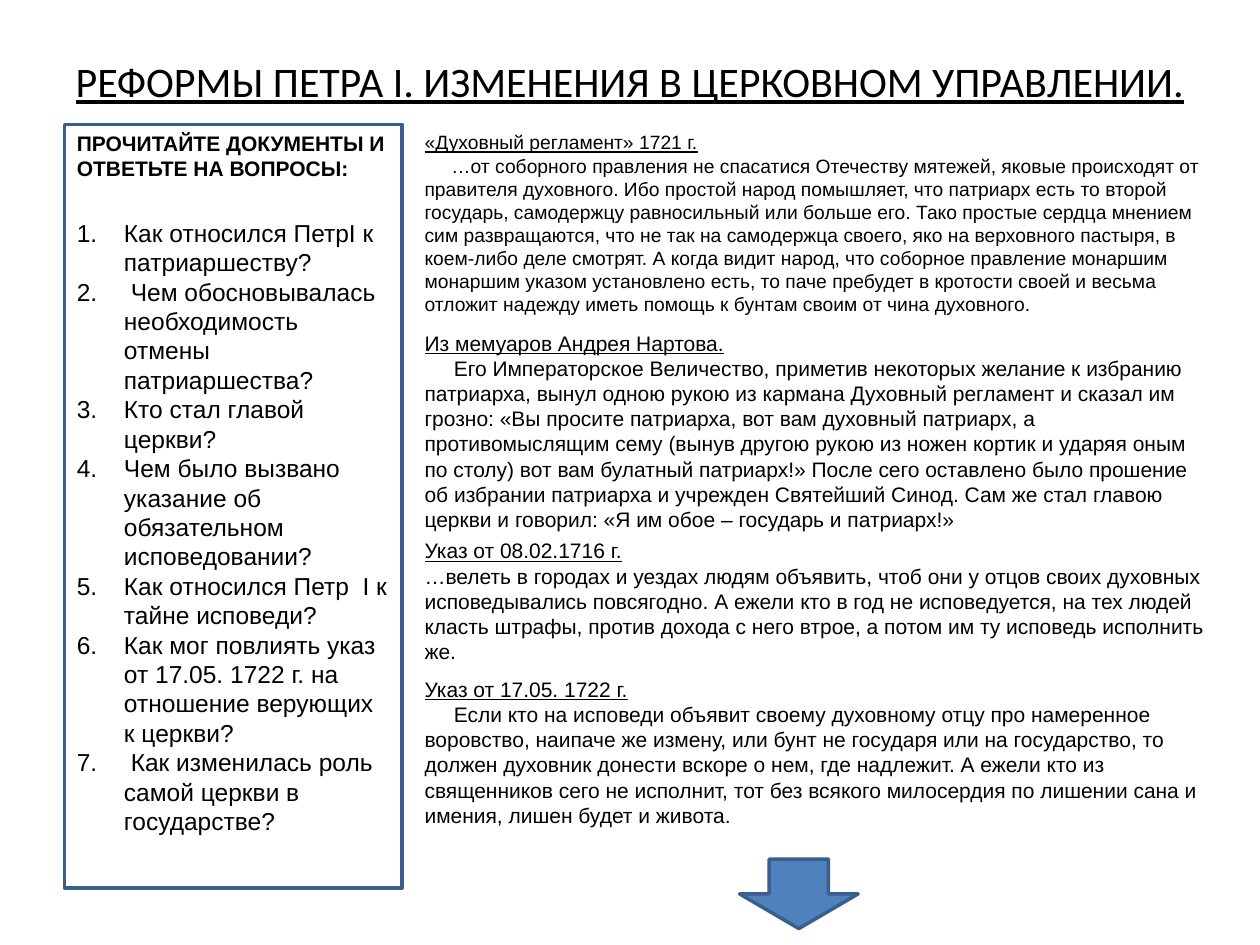
from pptx import Presentation
from pptx.dml.color import RGBColor
from pptx.enum.shapes import MSO_SHAPE
from pptx.enum.text import MSO_ANCHOR, PP_ALIGN
from pptx.util import Cm, Pt

RECTANGLE, DOWN_ARROW = MSO_SHAPE.RECTANGLE, MSO_SHAPE.DOWN_ARROW
TOP, MIDDLE = MSO_ANCHOR.TOP, MSO_ANCHOR.MIDDLE
LEFT, CENTER = PP_ALIGN.LEFT, PP_ALIGN.CENTER
BLACK = RGBColor(0x00, 0x00, 0x00)
BLUE = RGBColor(0x4F, 0x81, 0xBD)
DARK_BLUE = RGBColor(0x3A, 0x5F, 0x8C)

QUESTIONS = [
    "Как относился ПетрI к патриаршеству?",
    " Чем обосновывалась необходимость отмены патриаршества?",
    "Кто стал главой церкви?",
    "Чем было вызвано указание об обязательном исповедовании?",
    "Как относился Петр  I к тайне исповеди?",
    "Как мог повлиять указ от 17.05. 1722 г. на отношение верующих к церкви?",
    " Как изменилась роль самой церкви в государстве?",
]

# top (cm), height (cm), font size (pt), first-line indent (cm), heading, text
DOCUMENTS = [
    (2.51, 4.78, 11, 0.54, "«Духовный регламент» 1721 г.",
     "…от соборного правления не спасатися Отечеству мятежей, яковые происходят от "
     "правителя духовного. Ибо простой народ помышляет, что патриарх есть то второй "
     "государь, самодержцу равносильный или больше его. Тако простые сердца мнением "
     "сим развращаются, что не так на самодержца своего, яко на верховного пастыря, в "
     "коем-либо деле смотрят. А когда видит народ, что соборное правление монаршим "
     "монаршим указом установлено есть, то паче пребудет в кротости своей и весьма "
     "отложит надежду иметь помощь к бунтам своим от чина духовного."),
    (6.53, 4.37, 12, 0.59, "Из мемуаров Андрея Нартова.",
     "Его Императорское Величество, приметив некоторых желание к избранию "
     "патриарха, вынул одною рукою из кармана Духовный регламент и сказал им "
     "грозно: «Вы просите патриарха, вот вам духовный патриарх, а "
     "противомыслящим сему (вынув другою рукою из ножен кортик и ударяя оным "
     "по столу) вот вам булатный патриарх!» После сего оставлено было прошение "
     "об избрании патриарха и учрежден Святейший Синод. Сам же стал главою "
     "церкви и говорил: «Я им обое – государь и патриарх!»"),
    (10.72, 2.82, 12, 0, "Указ от 08.02.1716 г.",
     "…велеть в городах и уездах людям объявить, чтоб они у отцов своих духовных "
     "исповедывались повсягодно. А ежели кто в год не исповедуется, на тех людей "
     "класть штрафы, против дохода с него втрое, а потом им ту исповедь исполнить же."),
    (13.51, 4.11, 12, 0.59, "Указ от 17.05. 1722 г.",
     "Если кто на исповеди объявит своему духовному отцу про намеренное "
     "воровство, наипаче же измену, или бунт не государя или на государство, то "
     "должен духовник донести вскоре о нем, где надлежит. А ежели кто из "
     "священников сего не исполнит, тот без всякого милосердия по лишении сана и "
     "имения, лишен будет и живота."),
]


def style(paragraph, size, font_name="Arial", align=LEFT):
    paragraph.alignment = align
    paragraph.font.name = font_name
    paragraph.font.size = Pt(size)
    paragraph.font.color.rgb = BLACK


def add_outlined_shape(preset, left, top, width, height):
    shape = slide.shapes.add_shape(preset, Cm(left), Cm(top), Cm(width), Cm(height))
    shape.shadow.inherit = False
    shape.line.color.rgb = DARK_BLUE
    shape.line.width = Pt(2)
    return shape


prs = Presentation()
prs.slide_width, prs.slide_height = Cm(25.4), Cm(19.05)
slide = prs.slides.add_slide(prs.slide_layouts[5])

title = slide.shapes.title
title.left, title.top, title.width, title.height = Cm(1.27), Cm(0.76), Cm(22.86), Cm(1.75)
title.text_frame.text = "РЕФОРМЫ ПЕТРА I. ИЗМЕНЕНИЯ В ЦЕРКОВНОМ УПРАВЛЕНИИ."
title.text_frame.vertical_anchor = MIDDLE
title_line = title.text_frame.paragraphs[0]
style(title_line, 24, "Calibri", CENTER)
title_line.font.underline = True

# Questions on the left
question_box = add_outlined_shape(RECTANGLE, 1.3, 2.51, 6.81, 15.39)
question_box.fill.background()
question_frame = question_box.text_frame
question_frame.word_wrap = True
question_frame.vertical_anchor = TOP
task = question_frame.paragraphs[0]
task.text = "ПРОЧИТАЙТЕ ДОКУМЕНТЫ И ОТВЕТЬТЕ НА ВОПРОСЫ:"
style(task, 12)
task.font.bold = True

for number, wording in enumerate(QUESTIONS):
    question = question_frame.add_paragraph()
    question.text = wording
    properties = question._p.get_or_add_pPr()
    properties.set("marL", str(Cm(0.95)))
    properties.set("indent", str(Cm(-0.95)))
    numbering = properties.makeelement(
        "{http://schemas.openxmlformats.org/drawingml/2006/main}buAutoNum",
        {"type": "arabicPeriod"})
    properties.append(numbering)
    style(question, 14)
    if number == 0:
        question.space_before = Pt(21)

# Documents on the right
for top, height, size, first_line, heading, wording in DOCUMENTS:
    document = slide.shapes.add_textbox(Cm(8.31), Cm(top), Cm(16.41), Cm(height))
    document.text_frame.word_wrap = True
    source_name = document.text_frame.paragraphs[0]
    source_name.text = heading
    style(source_name, size)
    source_name.font.underline = True
    passage = document.text_frame.add_paragraph()
    passage.text = wording
    passage._p.get_or_add_pPr().set("indent", str(Cm(first_line)))
    style(passage, size)

arrow = add_outlined_shape(DOWN_ARROW, 14.91, 17.32, 2.39, 1.4)
arrow.fill.solid()
arrow.fill.fore_color.rgb = BLUE

prs.save("out.pptx")
